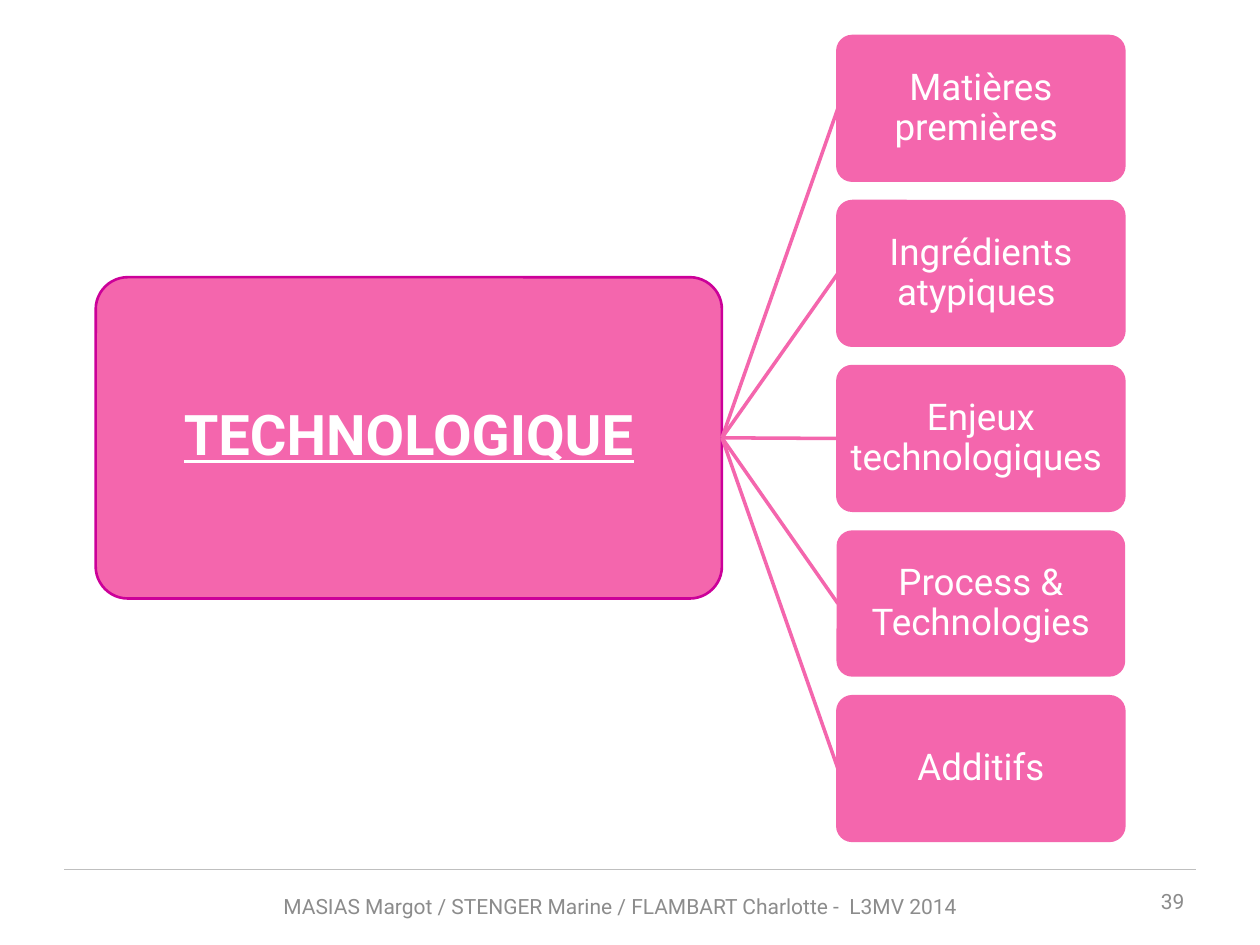
from lxml.etree import SubElement
from pptx import Presentation
from pptx.dml.color import RGBColor
from pptx.enum.shapes import MSO_CONNECTOR, MSO_SHAPE
from pptx.enum.text import MSO_ANCHOR, PP_ALIGN
from pptx.oxml.ns import qn
from pptx.util import Inches, Pt

TOPIC = "TECHNOLOGIQUE"
# (label, outline width in points)
BRANCHES = [
    ("Matières premières ", 2),
    ("Ingrédients atypiques ", 2),
    ("Enjeux technologiques ", 2),
    ("Process & Technologies", 1.5),
    ("Additifs", 2),
]
FOOTER = "MASIAS Margot / STENGER Marine / FLAMBART Charlotte -  L3MV 2014"
PAGE_NUMBER = "39"

COLORS = {"pink": "F466AD", "magenta": "CC0099", "white": "FFFFFF",
          "gray": "8C8C8C", "rule": "BFBFBF"}
FONT = "Roboto"

TOPIC_BOX = (0.76, 2.2, 4.97, 2.55)
BRANCH_LEFT, BRANCH_TOP, BRANCH_W, BRANCH_H = 6.65, 0.29, 2.27, 1.14
BRANCH_STEP = 1.31


def color(name):
    return RGBColor.from_string(COLORS[name])


def write(s, text, size, name, align=PP_ALIGN.CENTER, bold=None,
          underline=None, inset=None, spacing=None):
    tf = s.text_frame
    tf.word_wrap = True
    tf.vertical_anchor = MSO_ANCHOR.MIDDLE
    if inset is not None:
        tf.margin_left = tf.margin_right = Inches(inset)
        tf.margin_top = tf.margin_bottom = Inches(inset)
    p = tf.paragraphs[0]
    p.alignment = align
    p.line_spacing = spacing
    r = p.add_run()
    r.text = text
    r.font.name, r.font.size = FONT, Pt(size)
    r.font.bold, r.font.underline = bold, underline
    r.font.color.rgb = color(name)


def add_box(slide, box, line, width):
    s = slide.shapes.add_shape(MSO_SHAPE.ROUNDED_RECTANGLE, *map(Inches, box))
    s.adjustments[0] = 0.1
    s.shadow.inherit = False
    s.fill.solid()
    s.fill.fore_color.rgb = color("pink")
    s.line.color.rgb = color(line)
    s.line.width = Pt(width)
    return s


def add_line(slide, x1, y1, x2, y2, name, width):
    c = slide.shapes.add_connector(MSO_CONNECTOR.STRAIGHT,
                                   *map(Inches, (x1, y1, x2, y2)))
    c.line.color.rgb = color(name)
    c.line.width = Pt(width)
    SubElement(c._element.spPr, qn("a:effectLst"))


def add_label(slide, box, text, align):
    s = slide.shapes.add_textbox(*map(Inches, box))
    write(s, text, 12, "gray", align)


def main():
    prs = Presentation()
    prs.slide_width, prs.slide_height = Inches(10), Inches(7.5)
    slide = prs.slides.add_slide(prs.slide_layouts[6])

    add_line(slide, 0.51, 6.9, 9.49, 6.9, "rule", 0.75)
    add_label(slide, (7.17, 6.95, 2.33, 0.4), PAGE_NUMBER, PP_ALIGN.RIGHT)

    topic = add_box(slide, TOPIC_BOX, "magenta", 1.5)
    write(topic, TOPIC, 32, "white", bold=True, underline=True,
          inset=0.02, spacing=0.9)

    left, top, width, height = TOPIC_BOX
    hub_x, hub_y = left + width, top + height / 2
    for i, (label, outline) in enumerate(BRANCHES):
        y = BRANCH_TOP + i * BRANCH_STEP
        add_line(slide, hub_x, hub_y, BRANCH_LEFT, y + BRANCH_H / 2, "pink", 2)
        s = add_box(slide, (BRANCH_LEFT, y, BRANCH_W, BRANCH_H), "pink", outline)
        write(s, label, 21, "white", inset=0.01, spacing=0.9)

    add_label(slide, (1.54, 7.06, 6.77, 0.26), FOOTER, PP_ALIGN.CENTER)
    prs.save("out.pptx")


if __name__ == "__main__":
    main()
